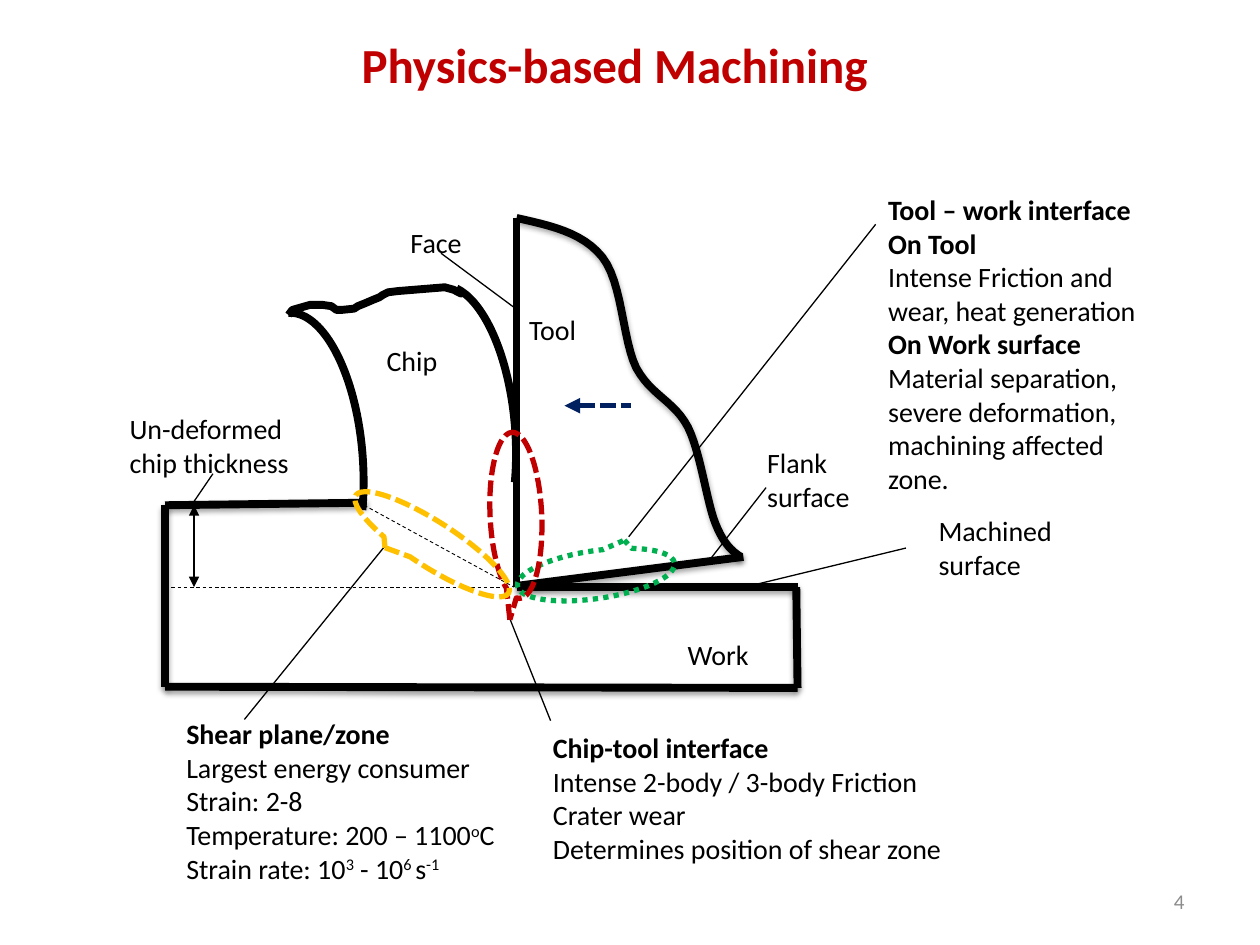
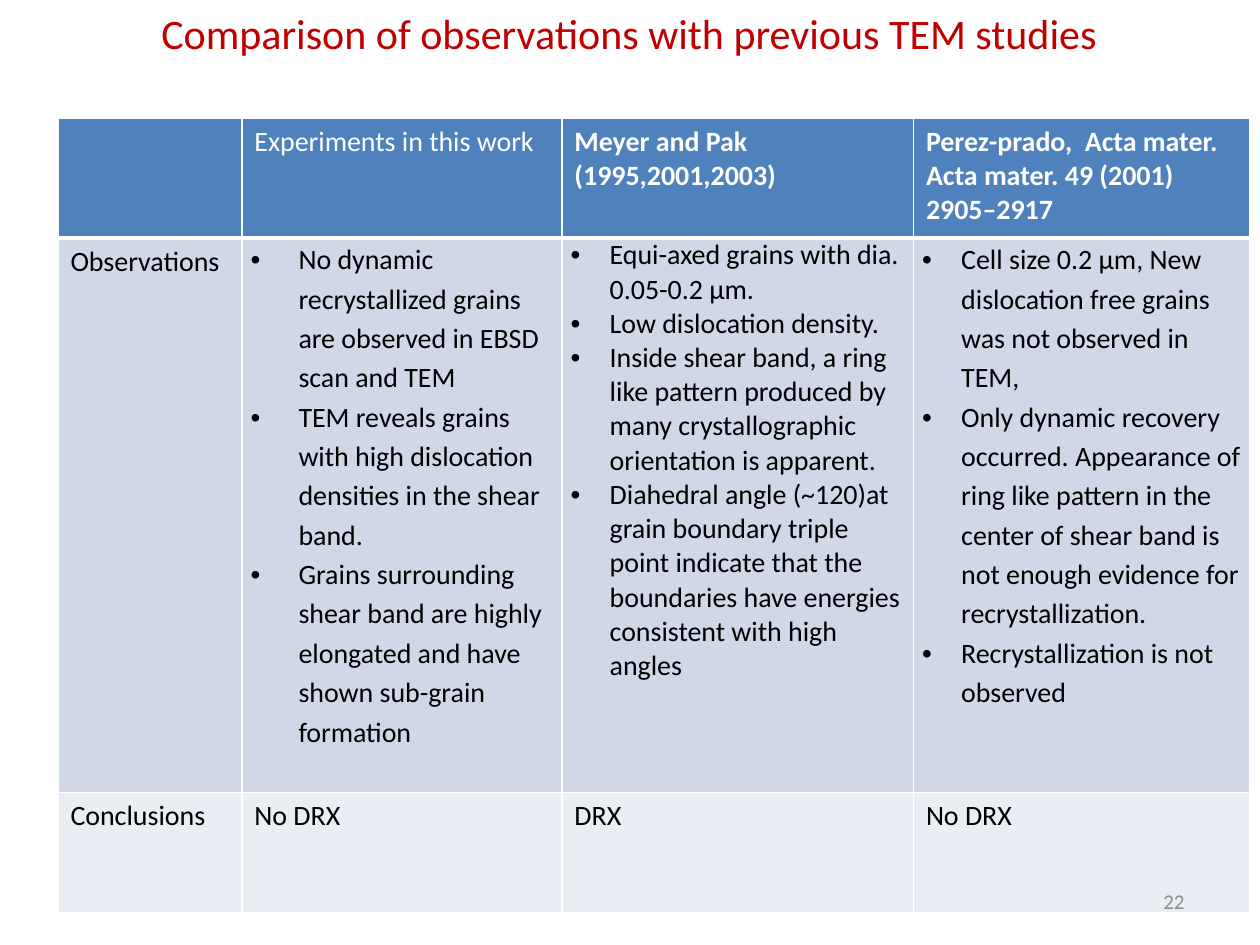
from dataclasses import dataclass
from typing import Optional

from lxml.etree import SubElement
from pptx import Presentation
from pptx.dml.color import RGBColor
from pptx.enum.dml import MSO_LINE
from pptx.enum.shapes import MSO_CONNECTOR, MSO_SHAPE
from pptx.enum.text import MSO_ANCHOR, MSO_AUTO_SIZE, PP_ALIGN
from pptx.oxml.ns import qn
from pptx.util import Inches, Pt

Point = tuple[float, float]
Box = tuple[float, float, float, float]


@dataclass(frozen=True)
class Theme:
    font: str = "Calibri"
    title: str = "C00000"
    ink: str = "000000"
    paper: str = "FFFFFF"
    page: str = "8C8C8C"
    motion: str = "002060"
    flank_zone: str = "00B050"
    face_zone: str = "C00000"
    shear_zone: str = "FFC000"
    rows: tuple[str, ...] = ("4F81BD", "D0D8E8", "E9EDF4")
    body_size: float = 16
    page_size: float = 12


THEME = Theme()


@dataclass(frozen=True)
class Stroke:
    width: float
    color: str = THEME.ink
    dash: Optional[MSO_LINE] = None
    shadow: bool = False
    head: bool = False
    tail: bool = False


@dataclass(frozen=True)
class Edge:
    start: Point
    end: Point
    stroke: Stroke


@dataclass(frozen=True)
class Outline:
    kind: MSO_SHAPE
    box: Box
    rotation: float
    stroke: Stroke
    angles: tuple[float, ...] = ()


@dataclass(frozen=True)
class Label:
    box: Box
    lines: tuple[str, ...]
    bold_lines: tuple[int, ...] = ()


@dataclass(frozen=True)
class Bullets:
    items: tuple[str, ...]
    indent: float
    spacing: Optional[float] = None


LEADER = Stroke(0.75)
HIDDEN = Stroke(0.5, dash=MSO_LINE.DASH)
HEAVY = Stroke(4.5)
RAISED = Stroke(4.5, shadow=True)

EDGES = (
    Edge((4.05, 4.92), (4.37, 5.72), LEADER),
    Edge((4.99, 4.26), (6.95, 1.78), LEADER),
    Edge((1.54, 3.98), (1.69, 3.76), LEADER),
    Edge((3.05, 4.34), (1.94, 5.71), LEADER),
    Edge((7.19, 4.35), (5.91, 4.66), LEADER),
    Edge((6.08, 3.87), (5.62, 4.46), LEADER),
    Edge((3.5, 2.01), (4.08, 2.44), LEADER),
    Edge((4.1, 4.65), (5.9, 4.42), RAISED),
    Edge((6.32, 4.66), (6.33, 5.46), RAISED),
    Edge((1.31, 4.01), (2.91, 3.99), RAISED),
    Edge((1.31, 4.01), (1.31, 5.45), RAISED),
    Edge((4.1, 4.66), (6.33, 4.66), RAISED),
    Edge((1.31, 5.45), (6.33, 5.46), RAISED),
    Edge((4.1, 1.73), (4.1, 4.66), HEAVY),
    Edge((1.31, 4.66), (4.02, 4.66), HIDDEN),
    Edge((2.89, 4.01), (4.08, 4.66), HIDDEN),
    Edge((1.54, 4.01), (1.54, 4.66), Stroke(0.75, head=True, tail=True)),
    Edge((4.48, 3.22), (5.01, 3.22),
         Stroke(3, THEME.motion, MSO_LINE.SQUARE_DOT, head=True)),
)

OUTLINES = (
    Outline(MSO_SHAPE.ARC, (1.87, 2.48, 1.01, 2.36), 355.8, HEAVY, (162, 25.18)),
    Outline(MSO_SHAPE.ARC, (3.08, 2.26, 1.01, 2.36), 355.8, HEAVY, (165.66, 25.18)),
    Outline(MSO_SHAPE.OVAL_CALLOUT, (4.1, 4.37, 1.26, 0.38), 171.7,
            Stroke(3, THEME.flank_zone, MSO_LINE.ROUND_DOT)),
    Outline(MSO_SHAPE.OVAL_CALLOUT, (3.89, 3.43, 0.41, 1.32), 357.4,
            Stroke(3, THEME.face_zone, MSO_LINE.SQUARE_DOT)),
    Outline(MSO_SHAPE.OVAL_CALLOUT, (2.71, 4.14, 1.44, 0.36), 32.7,
            Stroke(3, THEME.shear_zone, MSO_LINE.SQUARE_DOT)),
)

TOOL_CURVE = (
    (4.1, 1.73), (4.36, 1.79), (4.62, 1.84), (4.78, 2.04),
    (4.94, 2.24), (4.94, 2.7), (5.05, 2.92),
    (5.17, 3.14), (5.35, 3.18), (5.46, 3.39),
    (5.56, 3.59), (5.61, 3.99), (5.68, 4.16),
    (5.75, 4.33), (5.82, 4.38), (5.88, 4.42),
)
CHIP_TOP = (
    (2.29, 2.5), (2.32, 2.46), (2.39, 2.44), (2.46, 2.42), (2.56, 2.42),
    (2.63, 2.43), (2.67, 2.46), (2.71, 2.46), (2.81, 2.45), (2.84, 2.43),
    (2.89, 2.41), (2.96, 2.38), (3.01, 2.36), (3.04, 2.34), (3.08, 2.32),
    (3.16, 2.31), (3.53, 2.28), (3.6, 2.3), (3.66, 2.33), (3.65, 2.31),
    (3.67, 2.33),
)

LABELS = (
    Label((4.29, 5.75, 3.44, 1.16),
          ("Chip-tool interface", "Intense 2-body / 3-body Friction", "Crater wear",
           "Determines position of shear zone"), (0,)),
    Label((1.38, 5.64, 2.72, 1.23),
          ("Shear plane/zone", "Largest energy consumer", "Strain: 2-8",
           "Temperature: 200 – 1100^o^C", "Strain rate: 10^3^ - 10^6 ^s^-1"), (0,)),
    Label((6.95, 1.48, 2.25, 2.5),
          ("Tool – work interface", "On Tool",
           "Intense Friction and wear, heat generation", "On Work surface",
           "Material separation, severe deformation, machining affected zone."),
          (0, 1, 3)),
    Label((4.1, 2.43, 0.78, 0.34), ("Tool",)),
    Label((5.36, 5.01, 0.82, 0.32), ("Work",)),
    Label((0.93, 3.22, 1.47, 0.63), ("Un-deformed", "chip thickness")),
    Label((2.97, 2.68, 0.89, 0.37), ("Chip",)),
    Label((7.35, 4.03, 1.11, 0.6), ("Machined surface",)),
    Label((5.99, 3.49, 0.96, 0.6), ("Flank surface",)),
    Label((3.16, 1.74, 0.7, 0.35), ("Face",)),
)

COLUMNS = (1.46, 2.54, 2.79, 2.67)
ROWS = (0.95, 4.4, 0.95)
COMPARISON = (
    ("", "Experiments in this work", "Meyer and Pak (1995,2001,2003)",
     "Perez-prado,  Acta mater. Acta mater. 49 (2001) 2905–2917"),
    ("Observations",
     Bullets((
         "No dynamic recrystallized grains are observed in EBSD scan and TEM",
         "TEM reveals grains with high dislocation densities in the shear band.",
         "Grains surrounding shear band are highly elongated and have shown "
         "sub-grain formation"), 0.38, 1.15),
     Bullets((
         "Equi-axed grains with dia. 0.05-0.2 µm.",
         "Low dislocation density.",
         "Inside shear band, a ring like pattern produced by many crystallographic "
         "orientation is apparent.",
         "Diahedral angle (~120)at grain boundary triple point indicate that the "
         "boundaries have energies consistent with high angles"), 0.31),
     Bullets((
         "Cell size 0.2 µm, New dislocation free grains was not observed in TEM,",
         "Only dynamic recovery occurred. Appearance of ring like pattern in the "
         "center of shear band is not enough evidence for recrystallization.",
         "Recrystallization is not observed"), 0.31, 1.15)),
    ("Conclusions", "No DRX", "DRX", "No DRX"),
)


def inches(values) -> list:
    return [Inches(v) for v in values]


def write(tf, *lines: str, size: float = THEME.body_size, color: str = THEME.ink,
          bold: bool = False, bold_lines: tuple[int, ...] = (),
          align: PP_ALIGN = PP_ALIGN.LEFT, spacing: Optional[float] = None,
          bullet_indent: float = 0) -> None:
    for i, line in enumerate(lines):
        p = tf.add_paragraph() if i else tf.paragraphs[0]
        p.alignment = align
        if spacing:
            p.line_spacing = spacing
        if bullet_indent:
            pPr = p._p.get_or_add_pPr()
            pPr.set("marL", str(Inches(bullet_indent)))
            pPr.set("indent", str(-Inches(bullet_indent)))
            SubElement(pPr, qn("a:buFont"), typeface="Arial")
            SubElement(pPr, qn("a:buChar"), char="•")
        for j, piece in enumerate(line.split("^")):
            r = p.add_run()
            r.text = piece
            r.font.name, r.font.size = THEME.font, Pt(size)
            r.font.bold = bold or i in bold_lines
            r.font.color.rgb = RGBColor.from_string(color)
            if j % 2:
                r._r.get_or_add_rPr().set("baseline", "30000")


def add_label(s, box: Box, *lines: str, anchor: MSO_ANCHOR = MSO_ANCHOR.TOP,
              **fmt) -> None:
    tf = s.shapes.add_textbox(*inches(box)).text_frame
    tf.word_wrap = True
    tf.vertical_anchor = anchor
    write(tf, *lines, **fmt)


def add_slide(prs, title: str, box: Box, **fmt):
    s = prs.slides.add_slide(prs.slide_layouts[5])
    sp = s.shapes.title
    sp.left, sp.top, sp.width, sp.height = inches(box)
    tf = sp.text_frame
    tf.word_wrap = False
    tf.auto_size = MSO_AUTO_SIZE.SHAPE_TO_FIT_TEXT
    tf.vertical_anchor = MSO_ANCHOR.TOP
    write(tf, title, color=THEME.title, **fmt)
    return s


def add_page_number(s, number: int) -> None:
    add_label(s, (7.17, 6.95, 2.33, 0.4), str(number), anchor=MSO_ANCHOR.MIDDLE,
              size=THEME.page_size, color=THEME.page, align=PP_ALIGN.RIGHT)


def apply_stroke(sp, stroke: Stroke) -> None:
    sp.line.color.rgb = RGBColor.from_string(stroke.color)
    sp.line.width = Pt(stroke.width)
    if stroke.dash:
        sp.line.dash_style = stroke.dash
    spPr = sp._element.spPr
    for tag, shown in (("a:headEnd", stroke.head), ("a:tailEnd", stroke.tail)):
        if shown:
            SubElement(spPr.find(qn("a:ln")), qn(tag), type="triangle")
    effects = SubElement(spPr, qn("a:effectLst"))
    if stroke.shadow:
        shadow = SubElement(effects, qn("a:outerShdw"), blurRad=str(Pt(3.1)),
                            dist=str(Pt(1.8)), dir="5400000", rotWithShape="0")
        color = SubElement(shadow, qn("a:srgbClr"), val=THEME.ink)
        SubElement(color, qn("a:alpha"), val="35000")


def add_edge(s, edge: Edge) -> None:
    sp = s.shapes.add_connector(MSO_CONNECTOR.STRAIGHT, *inches(edge.start + edge.end))
    apply_stroke(sp, edge.stroke)


def add_outline(s, outline: Outline) -> None:
    sp = s.shapes.add_shape(outline.kind, *inches(outline.box))
    sp.rotation = outline.rotation
    for i, angle in enumerate(outline.angles):
        sp.adjustments[i] = angle
    sp.fill.background()
    apply_stroke(sp, outline.stroke)


def flatten(curve: tuple[Point, ...], steps: int = 12) -> list[Point]:
    points = [curve[0]]
    for i in range(0, len(curve) - 1, 3):
        for t in (k / steps for k in range(1, steps + 1)):
            weights = ((1 - t) ** 3, 3 * t * (1 - t) ** 2, 3 * t * t * (1 - t), t ** 3)
            points.append(tuple(sum(w * c[axis] for w, c in zip(weights, curve[i:i + 4]))
                                for axis in (0, 1)))
    return points


def add_profile(s, points, stroke: Stroke) -> None:
    start, *rest = [inches(point) for point in points]
    builder = s.shapes.build_freeform(*start)
    builder.add_line_segments(rest, close=False)
    sp = builder.convert_to_shape()
    sp.fill.background()
    apply_stroke(sp, stroke)


def format_cell(cell, content, row: int) -> None:
    header = row == 0
    if isinstance(content, Bullets):
        cell.margin_left = cell.margin_right = Inches(0.07)
        cell.margin_top = cell.margin_bottom = 0
        write(cell.text_frame, *content.items, spacing=content.spacing,
              bullet_indent=content.indent)
    elif content:
        write(cell.text_frame, content, color=THEME.paper if header else THEME.ink,
              bold=header and content != COMPARISON[0][1])
    tcPr = cell._tc.get_or_add_tcPr()
    for side in "LRTB":
        width = 3 if header and side == "B" else 1
        ln = SubElement(tcPr, qn(f"a:ln{side}"), w=str(Pt(width)))
        SubElement(SubElement(ln, qn("a:solidFill")), qn("a:srgbClr"), val=THEME.paper)
    cell.fill.solid()
    cell.fill.fore_color.rgb = RGBColor.from_string(THEME.rows[row])


def build_machining(prs) -> None:
    s = add_slide(prs, "Physics-based Machining", (2.77, 0.22, 4.26, 0.57),
                  size=28, bold=True)
    for edge in EDGES:
        add_edge(s, edge)
    add_profile(s, flatten(TOOL_CURVE), RAISED)
    add_profile(s, CHIP_TOP, HEAVY)
    for outline in OUTLINES:
        add_outline(s, outline)
    for label in LABELS:
        add_label(s, label.box, *label.lines, bold_lines=label.bold_lines)
    add_page_number(s, 4)


def build_comparison(prs) -> None:
    s = add_slide(prs, "Comparison of observations with previous TEM studies",
                  (1.18, 0.01, 7.7, 0.5), size=24)
    box = (0.46, 0.94, sum(COLUMNS), sum(ROWS))
    table = s.shapes.add_table(len(ROWS), len(COLUMNS), *inches(box)).table
    for column, width in zip(table.columns, COLUMNS):
        column.width = Inches(width)
    for i, (height, contents) in enumerate(zip(ROWS, COMPARISON)):
        table.rows[i].height = Inches(height)
        for j, content in enumerate(contents):
            format_cell(table.cell(i, j), content, i)
    add_page_number(s, 22)


def main() -> None:
    prs = Presentation()
    prs.slide_width, prs.slide_height = Inches(10), Inches(7.5)
    build_machining(prs)
    build_comparison(prs)
    prs.save("out.pptx")


if __name__ == "__main__":
    main()
